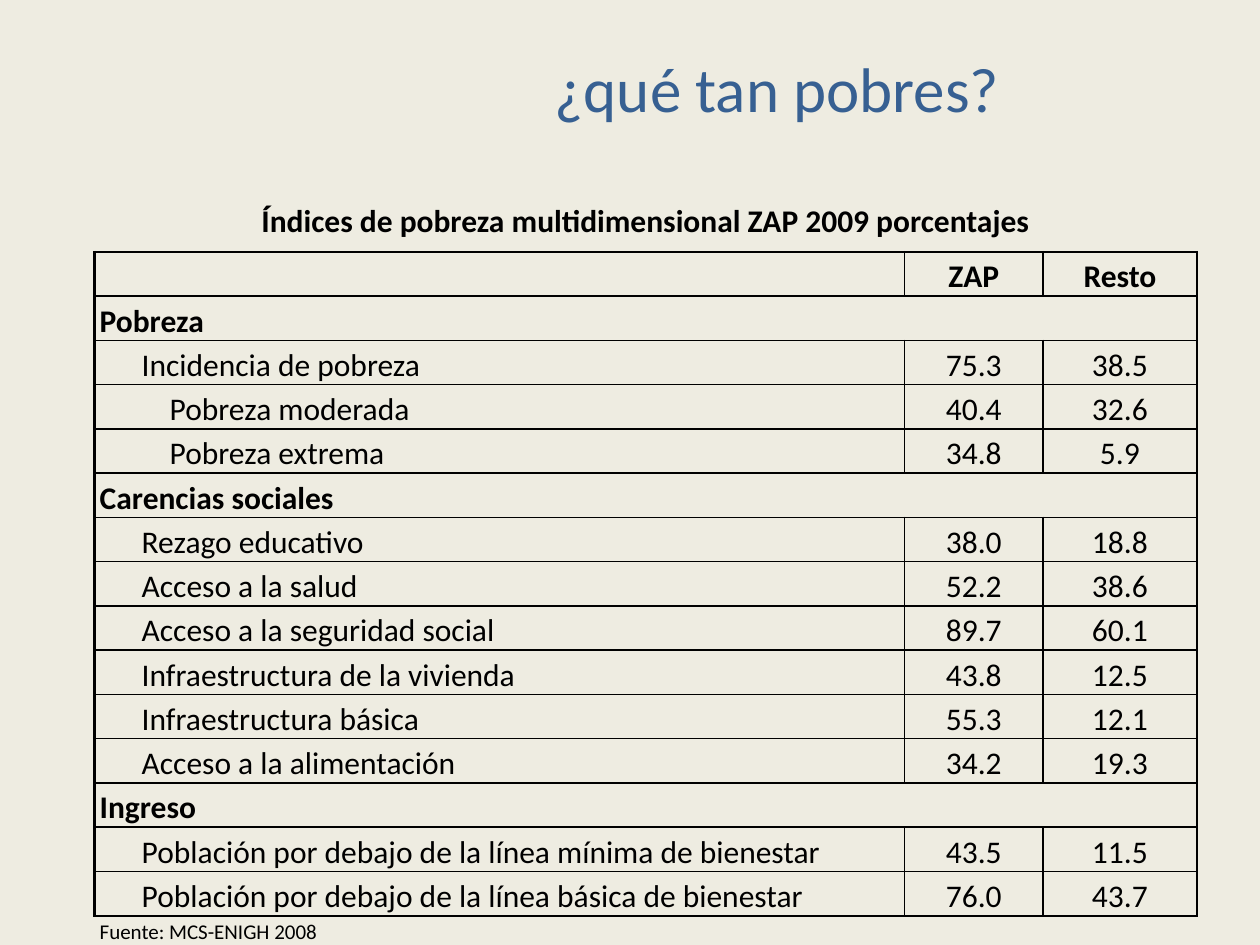
from lxml.etree import SubElement
from pptx import Presentation
from pptx.dml.color import RGBColor
from pptx.enum.text import MSO_ANCHOR as Anchor, PP_ALIGN as Align
from pptx.oxml.ns import qn
from pptx.util import Pt

# Content: (indent level, label, ZAP, Resto); level 0 is a section heading
TITLE = "¿qué tan pobres?"
CAPTION = "Índices de pobreza multidimensional ZAP 2009 porcentajes"
HEADINGS = ["", "ZAP", "Resto"]
ROWS = [
    (0, "Pobreza", "", ""),
    (1, "Incidencia de pobreza", "75.3", "38.5"),
    (2, "Pobreza moderada", "40.4", "32.6"),
    (2, "Pobreza extrema", "34.8", "5.9"),
    (0, "Carencias sociales", "", ""),
    (1, "Rezago educativo", "38.0", "18.8"),
    (1, "Acceso a la salud", "52.2", "38.6"),
    (1, "Acceso a la seguridad social", "89.7", "60.1"),
    (1, "Infraestructura de la vivienda", "43.8", "12.5"),
    (1, "Infraestructura básica", "55.3", "12.1"),
    (1, "Acceso a la alimentación", "34.2", "19.3"),
    (0, "Ingreso", "", ""),
    (1, "Población por debajo de la línea mínima de bienestar", "43.5", "11.5"),
    (1, "Población por debajo de la línea básica de bienestar", "76.0", "43.7"),
]
SOURCE = "Fuente: MCS-ENIGH 2008"

FONT = "Calibri"
INK, BLUE, CREAM = "000000", "376092", "EEECE1"
COLUMN_WIDTHS = [463, 79, 88]
ROW_HEIGHTS = [38] + [24] * (len(ROWS) + 1) + [16]
INDENTS = [0, 24, 40]
THICK, THIN = 1.5, 1
NO_STYLE = "{2D5ABB26-0587-4C30-8999-92F81FD0307C}"


def color(value):
    return RGBColor.from_string(value)


def set_font(para, size, value, bold=False):
    para.font.name = FONT
    para.font.size = Pt(size)
    para.font.bold = bold
    para.font.color.rgb = color(value)


def set_borders(cell, **widths):
    properties = cell._tc.get_or_add_tcPr()
    for side in "LRTB":
        if side in widths:
            line = SubElement(properties, qn(f"a:ln{side}"), w=str(Pt(widths[side])))
            fill = SubElement(line, qn("a:solidFill"))
            SubElement(fill, qn("a:srgbClr"), val=INK)


def fill_cell(cell, text, borders, size=18, bold=False, align=Align.LEFT,
              anchor=Anchor.BOTTOM, indent=0):
    set_borders(cell, **borders)
    cell.fill.background()
    cell.margin_left = cell.margin_right = Pt(3)
    cell.margin_top = cell.margin_bottom = 0
    cell.vertical_anchor = anchor
    para = cell.text_frame.paragraphs[0]
    para.alignment = align
    para.line_spacing = 1.15
    if indent:
        para._p.get_or_add_pPr().set("marL", str(Pt(indent)))
    set_font(para, size, INK, bold)
    if text:
        para.add_run().text = text
    else:  # keeps an empty cell from stretching its row
        SubElement(para._p, qn("a:endParaRPr"), sz=str(size * 100))


def grid_borders(row, column, merged=False):
    last_column = merged or column == len(COLUMN_WIDTHS) - 1
    return {
        "L": THICK if column == 0 else THIN,
        "R": THICK if last_column else THIN,
        "T": THICK if row == 1 else THIN,
        "B": THICK if row == len(ROWS) + 1 else THIN,
    }


# Page and title
deck = Presentation()
deck.slide_width, deck.slide_height = Pt(720), Pt(540)
page = deck.slides.add_slide(deck.slide_layouts[5])
page.background.fill.solid()
page.background.fill.fore_color.rgb = color(CREAM)

title = page.shapes.title
title.left, title.top, title.width, title.height = Pt(204), Pt(21.6), Pt(480), Pt(56)
title.text_frame.text = TITLE
title_para = title.text_frame.paragraphs[0]
title_para.alignment = Align.CENTER
set_font(title_para, 36, BLUE)

# Table frame
frame = page.shapes.add_table(
    len(ROW_HEIGHTS), len(COLUMN_WIDTHS), Pt(54), Pt(106),
    Pt(sum(COLUMN_WIDTHS)), Pt(sum(ROW_HEIGHTS)))
table = frame.table
table.first_row = table.horz_banding = False
table._tbl.tblPr.find(qn("a:tableStyleId")).text = NO_STYLE
for column, width in zip(table.columns, COLUMN_WIDTHS):
    column.width = Pt(width)
for row, height in zip(table.rows, ROW_HEIGHTS):
    row.height = Pt(height)
last_column = len(COLUMN_WIDTHS) - 1

# Caption and column headings
table.cell(0, 0).merge(table.cell(0, last_column))
fill_cell(table.cell(0, 0), CAPTION, {"B": THICK}, bold=True,
          align=Align.CENTER, anchor=Anchor.MIDDLE)
for c, heading in enumerate(HEADINGS):
    fill_cell(table.cell(1, c), heading, grid_borders(1, c), bold=True,
              align=Align.CENTER, anchor=Anchor.MIDDLE)

# Sections and figures
for r, (level, label, *figures) in enumerate(ROWS, start=2):
    is_section = level == 0
    if is_section:
        table.cell(r, 0).merge(table.cell(r, last_column))
    # the table's closing line sits under the last figures
    borders = grid_borders(r, 0, is_section)
    borders["B"] = THICK if r == len(ROWS) + 1 else THIN
    fill_cell(table.cell(r, 0), label, borders, bold=is_section, indent=INDENTS[level])
    if not is_section:
        for c, figure in enumerate(figures, start=1):
            fill_cell(table.cell(r, c), figure, grid_borders(r, c), align=Align.CENTER)

# Source line
for c, text in enumerate([SOURCE, "", ""]):
    fill_cell(table.cell(len(ROWS) + 2, c), text, {"T": THICK}, size=12)

deck.save("out.pptx")
